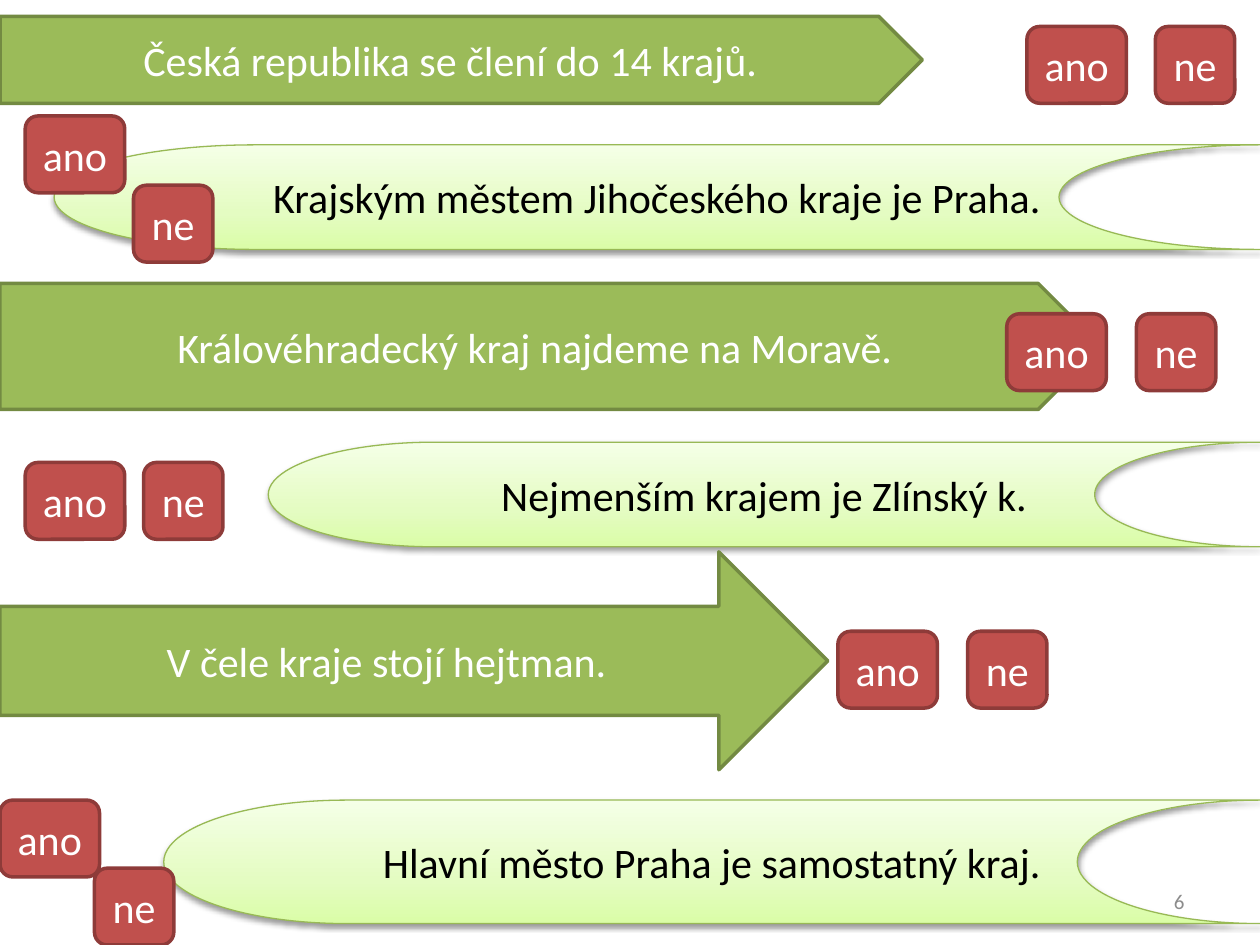
"""Build a yes-or-no quiz slide about the regions of the Czech Republic."""
import copy

import pptx
import pptx.dml.color
import pptx.enum.shapes
import pptx.enum.text
import pptx.oxml
import pptx.oxml.ns
import pptx.util

RGBColor = pptx.dml.color.RGBColor
Shape = pptx.enum.shapes.MSO_SHAPE
Align = pptx.enum.text.PP_ALIGN

GREEN = RGBColor(0x9B, 0xBB, 0x59)
GREEN_EDGE = RGBColor(0x73, 0x8A, 0x42)
RED = RGBColor(0xC0, 0x50, 0x4D)
RED_EDGE = RGBColor(0x8E, 0x3B, 0x39)
LIME_EDGE = RGBColor(0x98, 0xB9, 0x55)
LIME_STOPS = [
    (0, RGBColor(0xDA, 0xFD, 0xA7)),
    (0.35, RGBColor(0xE4, 0xFC, 0xC2)),
    (1, RGBColor(0xF5, 0xFF, 0xE7)),
]
WHITE = RGBColor(0xFF, 0xFF, 0xFF)
BLACK = RGBColor(0, 0, 0)
GRAY = RGBColor(0x8C, 0x8C, 0x8C)

SHADOW = (
    '<a:outerShdw xmlns:a="http://schemas.openxmlformats.org/drawingml/2006/main" '
    'blurRad="40000" dist="20000" dir="5400000" rotWithShape="0">'
    '<a:srgbClr val="000000"><a:alpha val="38000"/></a:srgbClr></a:outerShdw>'
)

deck = pptx.Presentation()
deck.slide_width = pptx.util.Inches(10)
deck.slide_height = pptx.util.Inches(7.5)
column = deck.slide_width / 100
row = deck.slide_height / 75
page = deck.slides.add_slide(deck.slide_layouts[6])


def write(box, text, size, color, align):
    frame = box.text_frame
    frame.word_wrap = True
    frame.vertical_anchor = pptx.enum.text.MSO_ANCHOR.MIDDLE
    para = frame.paragraphs[0]
    para.text = text
    para.alignment = align
    para.font.name = "Calibri"
    para.font.size = pptx.util.Pt(size)
    para.font.color.rgb = color


def add_box(kind, left, top, width, height, text, fill, edge, edge_width, color):
    box = page.shapes.add_shape(
        kind, int(left * column), int(top * row), int(width * column), int(height * row)
    )
    box.shadow.inherit = False
    if fill is not None:
        box.fill.solid()
        box.fill.fore_color.rgb = fill
    box.line.color.rgb = edge
    box.line.width = pptx.util.Pt(edge_width)
    write(box, text, 24, color, Align.CENTER)
    return box


number = page.shapes.add_textbox(
    int(71.7 * column), int(69.5 * row), int(23.3 * column), int(4 * row)
)
write(number, "6", 12, GRAY, Align.RIGHT)

statements = [
    (Shape.PENTAGON, 0, 1.3, 73.2, 6.9, "Česká republika se člení do 14 krajů."),
    (Shape.FLOWCHART_STORED_DATA, 4.3, 11.5, 95.7, 8.3,
     "Krajským městem Jihočeského kraje je Praha."),
    (Shape.PENTAGON, 0, 22.5, 87.4, 10, "Královéhradecký kraj najdeme na Moravě."),
    (Shape.FLOWCHART_STORED_DATA, 21.3, 35.1, 78.7, 8.3, "Nejmenším krajem je Zlínský k."),
    (Shape.RIGHT_ARROW, 0, 43.8, 65.7, 17.3, "V čele kraje stojí hejtman."),
    (Shape.FLOWCHART_STORED_DATA, 13, 63.5, 87, 9.8, "Hlavní město Praha je samostatný kraj."),
]
for statement in statements:
    if statement[0] != Shape.FLOWCHART_STORED_DATA:
        add_box(*statement, GREEN, GREEN_EDGE, 2, WHITE)
        continue
    banner = add_box(*statement, None, LIME_EDGE, 0.75, BLACK)
    banner.fill.gradient()
    banner.fill.gradient_angle = 90
    properties = banner._element.spPr
    stop_list = properties.find(".//" + pptx.oxml.ns.qn("a:gsLst"))
    stop_list.insert(1, copy.deepcopy(stop_list[0]))
    for stop, (position, color) in zip(banner.fill.gradient_stops, LIME_STOPS):
        stop.position = position
        stop.color.rgb = color
    effects = properties.find(pptx.oxml.ns.qn("a:effectLst"))
    effects.append(pptx.oxml.parse_xml(SHADOW))

answer_places = [
    ((81.5, 2.1), (91.7, 2.1)),
    ((2, 9.2), (10.6, 14.7)),
    ((79.9, 24.9), (90.2, 24.9)),
    ((2, 36.7), (11.4, 36.7)),
    ((66.5, 50.1), (76.8, 50.1)),
    ((0, 63.5), (7.5, 68.9)),
]
for yes_place, no_place in answer_places:
    for place, width, text in [(no_place, 6.3, "ne"), (yes_place, 7.9, "ano")]:
        add_box(Shape.ROUNDED_RECTANGLE, *place, width, 6.1, text, RED, RED_EDGE, 2, WHITE)

deck.save("out.pptx")
